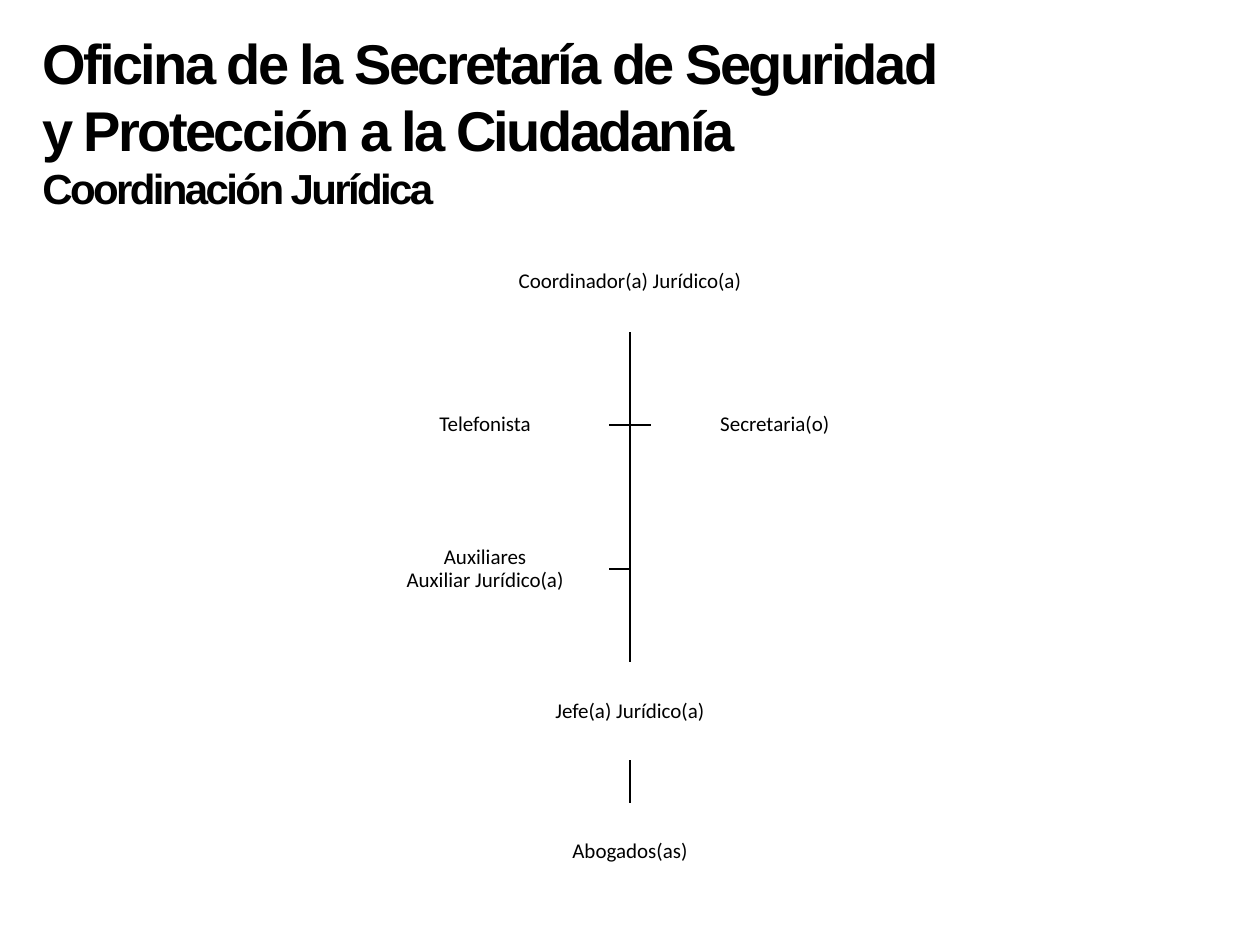
import pptx
import pptx.util
import pptx.dml.color
import pptx.enum.shapes
import pptx.enum.text
import pptx.oxml.ns
import lxml.etree

Cm = pptx.util.Cm
Pt = pptx.util.Pt
Color = pptx.dml.color.RGBColor.from_string
Align = pptx.enum.text.PP_ALIGN
Anchor = pptx.enum.text.MSO_ANCHOR
COLORS = {"ink": "000000", "paper": "FFFFFF"}
MID = 12.7
SIDE = 2.92


def style(par, face, size):
    for run in par.runs:
        run.font.name = face
        run.font.size = Pt(size)
        run.font.color.rgb = Color(COLORS["ink"])


def stroke(shape):
    shape.line.color.rgb = Color(COLORS["ink"])
    shape.line.width = Pt(1)


deck = pptx.Presentation()
deck.slide_width = Cm(25.4)
deck.slide_height = Cm(19.05)
slide = deck.slides.add_slide(deck.slide_layouts[5])

title = slide.shapes.title
title.left, title.top = Cm(0.6), Cm(0.44)
title.width, title.height = Cm(18.95), Cm(4.01)
frame = title.text_frame
frame.text = "Oficina de la Secretaría de Seguridad y Protección a la Ciudadanía\nCoordinación Jurídica"
frame.word_wrap = True
frame.auto_size = pptx.enum.text.MSO_AUTO_SIZE.SHAPE_TO_FIT_TEXT
frame.vertical_anchor = Anchor.TOP
for par, size in zip(frame.paragraphs, (32, 24)):
    par.alignment = Align.LEFT
    style(par, "Arial", size)
    for run in par.runs:
        run.font.bold = True
        run.font._element.set("spc", "-150")

posts = [
    ("chief", "Coordinador(a) Jurídico(a)", MID, 4.64, 6.32, 2.06),
    ("phone", "Telefonista", MID - SIDE, 7.53, 5, 2.08),
    ("clerk", "Secretaria(o)", MID + SIDE, 7.53, 5, 2.08),
    ("aides", "Auxiliares\nAuxiliar Jurídico(a)", MID - SIDE, 10.43, 5, 2.08),
    ("head", "Jefe(a) Jurídico(a)", MID, 13.35, 5.28, 1.98),
    ("lawyers", "Abogados(as)", MID, 16.18, 5.28, 1.98),
]
boxes = {}
for key, words, x, top, width, height in posts:
    box = slide.shapes.add_shape(
        pptx.enum.shapes.MSO_SHAPE.RECTANGLE,
        Cm(x - width / 2), Cm(top), Cm(width), Cm(height))
    box.shadow.inherit = False
    box.fill.solid()
    box.fill.fore_color.rgb = Color(COLORS["paper"])
    box.line.fill.background()
    frame = box.text_frame
    frame.text = words
    frame.word_wrap = True
    frame.vertical_anchor = Anchor.MIDDLE
    frame.margin_left = frame.margin_right = Cm(0.02)
    frame.margin_top = frame.margin_bottom = Cm(0.02)
    for par in frame.paragraphs:
        par.alignment = Align.CENTER
        par.line_spacing = 0.9
        style(par, "Calibri", 12)
    boxes[key] = box

for upper, lower in (("chief", "head"), ("head", "lawyers")):
    kind = pptx.enum.shapes.MSO_CONNECTOR.STRAIGHT
    line = slide.shapes.add_connector(kind, 0, 0, 0, 0)
    line.begin_connect(boxes[upper], 2)
    line.end_connect(boxes[lower], 0)
    stroke(line)
    lxml.etree.SubElement(line._element.spPr, pptx.oxml.ns.qn("a:effectLst"))

chief = boxes["chief"]
for key in ("aides", "clerk", "phone"):
    box = boxes[key]
    y = box.top + box.height // 2
    edge = box.left if key == "clerk" else box.left + box.width
    pen = slide.shapes.build_freeform(Cm(MID), chief.top + chief.height)
    pen.add_line_segments([(Cm(MID), y), (edge, y)], close=False)
    elbow = pen.convert_to_shape()
    elbow.shadow.inherit = False
    elbow.fill.background()
    stroke(elbow)

deck.save("out.pptx")
